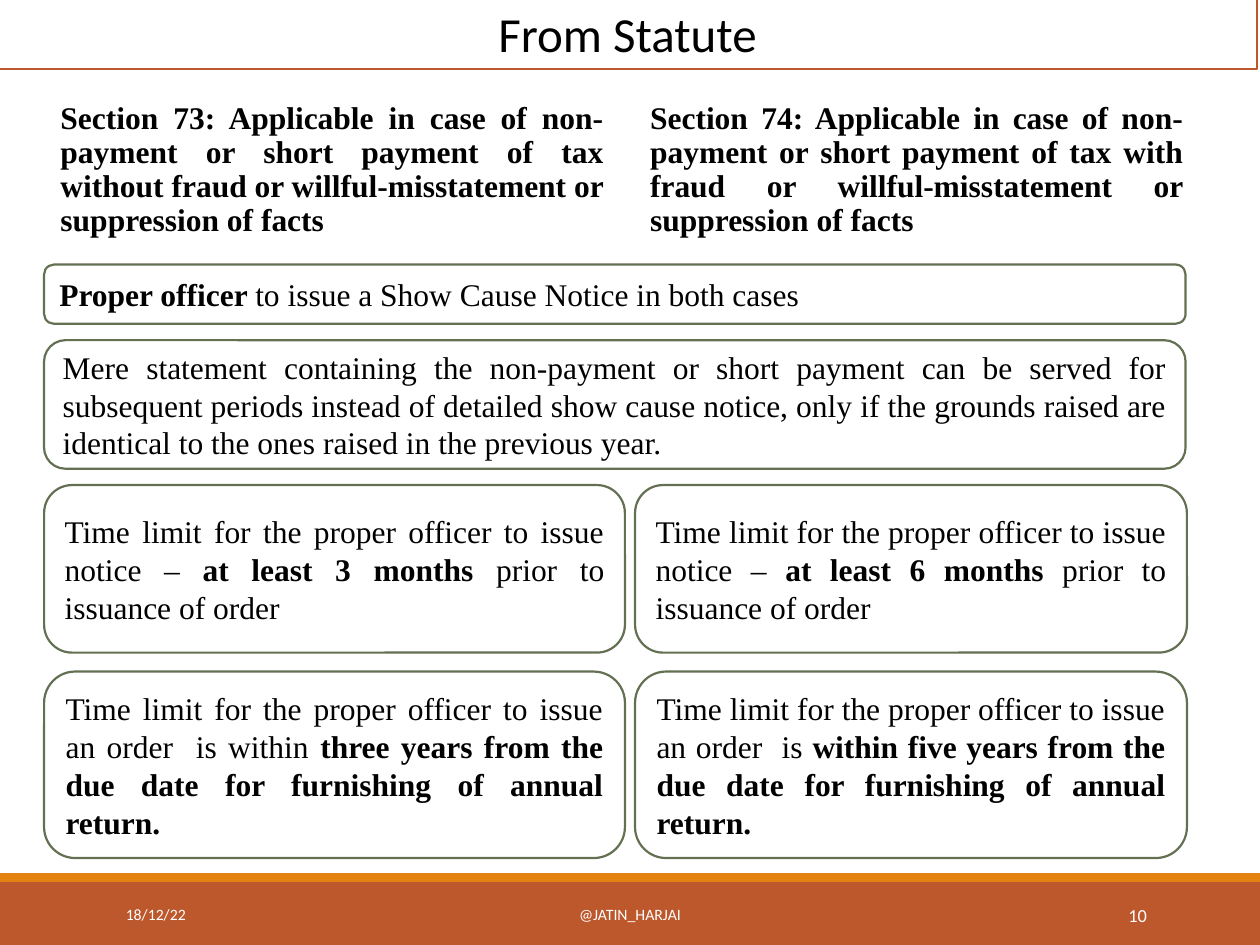
import dataclasses

import pptx
import pptx.dml.color
import pptx.enum.shapes
import pptx.enum.text
import pptx.util

ALIGN = pptx.enum.text.PP_ALIGN
ANCHOR = pptx.enum.text.MSO_ANCHOR
SHAPE = pptx.enum.shapes.MSO_SHAPE


@dataclasses.dataclass(frozen=True)
class Theme:
    rust: str = "BD582C"
    orange: str = "E48312"
    olive: str = "637052"
    white: str = "FFFFFF"
    black: str = "000000"
    sans: str = "Calibri"
    serif: str = "Times New Roman"
    title_size: float = 28
    body_size: float = 18
    number_size: float = 10.5
    footer_size: float = 9
    line_width: float = 1.25


THEME = Theme()
WIDTH, HEIGHT = 10, 7.5

# Grid: (left, width) of columns and (top, height) of rows, in inches
LEFT, RIGHT, FULL = (0.35, 4.61), (5.04, 4.38), (0.35, 9.06)
HEADING_LEFT, HEADING_RIGHT = (0.28, 4.61), (4.96, 4.53)
HEADING_ROW = (0.76, 1.33)
OFFICER_ROW, STATEMENT_ROW = (2.1, 0.47), (2.7, 1.02)
NOTICE_ROW, ORDER_ROW = (3.85, 1.33), (5.33, 1.48)
FOOTER_ROW = (7.06, 0.4)


def color(value):
    return pptx.dml.color.RGBColor.from_string(value)


def frame(column, row):
    """Turn a grid column and row into left, top, width, height."""
    return [pptx.util.Inches(n) for n in (column[0], row[0], column[1], row[1])]


def write(box, text, font=THEME.serif, size=THEME.body_size, ink=THEME.black,
          align=ALIGN.JUSTIFY, anchor=ANCHOR.MIDDLE, spacing=None, before=None,
          inset=0.1):
    """Fill a box with one paragraph; parts between ** marks are bold."""
    text_frame = box.text_frame
    text_frame.word_wrap = True
    text_frame.vertical_anchor = anchor
    text_frame.margin_left = pptx.util.Inches(inset)
    para = text_frame.paragraphs[0]
    para.alignment = align
    if spacing:
        para.line_spacing = spacing
    if before:
        para.space_before = pptx.util.Pt(before)
    for index, part in enumerate(text.split("**")):
        if part:
            span = para.add_run()
            span.text = part
            span.font.name = font
            span.font.size = pptx.util.Pt(size)
            span.font.bold = index % 2 == 1
            span.font.color.rgb = color(ink)


def add_panel(page, kind, column, row, fill=THEME.white, line=None):
    box = page.shapes.add_shape(kind, *frame(column, row))
    box.shadow.inherit = False
    box.fill.solid()
    box.fill.fore_color.rgb = color(fill)
    if line:
        box.line.color.rgb = color(line)
        box.line.width = pptx.util.Pt(THEME.line_width)
    else:
        box.line.fill.background()
    return box


def add_label(page, column, row, text, **style):
    write(page.shapes.add_textbox(*frame(column, row)), text, **style)


def add_card(page, column, row, text):
    box = add_panel(page, SHAPE.ROUNDED_RECTANGLE, column, row, line=THEME.olive)
    write(box, text)


def add_footer(page):
    add_panel(page, SHAPE.RECTANGLE, (0, WIDTH), (7, 0.5), fill=THEME.rust)
    add_panel(page, SHAPE.RECTANGLE, (0, WIDTH), (6.93, 0.07), fill=THEME.orange)
    for column, text, align, size in (
        ((0.9, 2.03), "18/12/22", ALIGN.LEFT, THEME.footer_size),
        ((3.02, 3.96), "@JATIN_HARJAI", ALIGN.CENTER, THEME.footer_size),
        ((8.12, 1.08), "10", ALIGN.RIGHT, THEME.number_size),
    ):
        add_label(page, column, FOOTER_ROW, text, font=THEME.sans, size=size,
                  ink=THEME.white, align=align)


def add_title(page, text):
    box = add_panel(page, SHAPE.RECTANGLE, (-0.02, WIDTH), (-0.02, 0.57),
                    line=THEME.rust)
    write(box, text, font=THEME.sans, size=THEME.title_size,
          align=ALIGN.CENTER, anchor=ANCHOR.TOP)


def main():
    deck = pptx.Presentation()
    deck.slide_width = pptx.util.Inches(WIDTH)
    deck.slide_height = pptx.util.Inches(HEIGHT)
    page = deck.slides.add_slide(deck.slide_layouts[6])

    add_footer(page)
    add_title(page, "From Statute")

    # Section headings
    for column, section, manner in (
        (HEADING_LEFT, "73", "without"),
        (HEADING_RIGHT, "74", "with"),
    ):
        add_label(page, column, HEADING_ROW,
                  f"**Section {section}: Applicable in case of non-payment or short "
                  f"payment of tax {manner} fraud or willful-misstatement or "
                  "suppression of facts**",
                  anchor=ANCHOR.TOP, spacing=0.9, before=12, inset=0.2)

    # Rules common to both sections
    add_card(page, FULL, OFFICER_ROW,
             "**Proper officer **to issue a Show Cause Notice in both cases")
    add_card(page, FULL, STATEMENT_ROW,
             "Mere statement containing the non-payment or short payment can be "
             "served for subsequent periods instead of detailed show cause notice, "
             "only if the grounds raised are identical to the ones raised in the "
             "previous year.")

    # Time limits by section
    limit = "Time limit for the proper officer to issue "
    for column, months, order in (
        (LEFT, "3", "within **three"),
        (RIGHT, "6", "**within five"),
    ):
        add_card(page, column, NOTICE_ROW,
                 f"{limit}notice – **at least {months} months** prior to "
                 "issuance of order")
        add_card(page, column, ORDER_ROW,
                 f"{limit}an order  is {order} years from the due date for "
                 "furnishing of annual return.**")

    deck.save("out.pptx")


if __name__ == "__main__":
    main()
